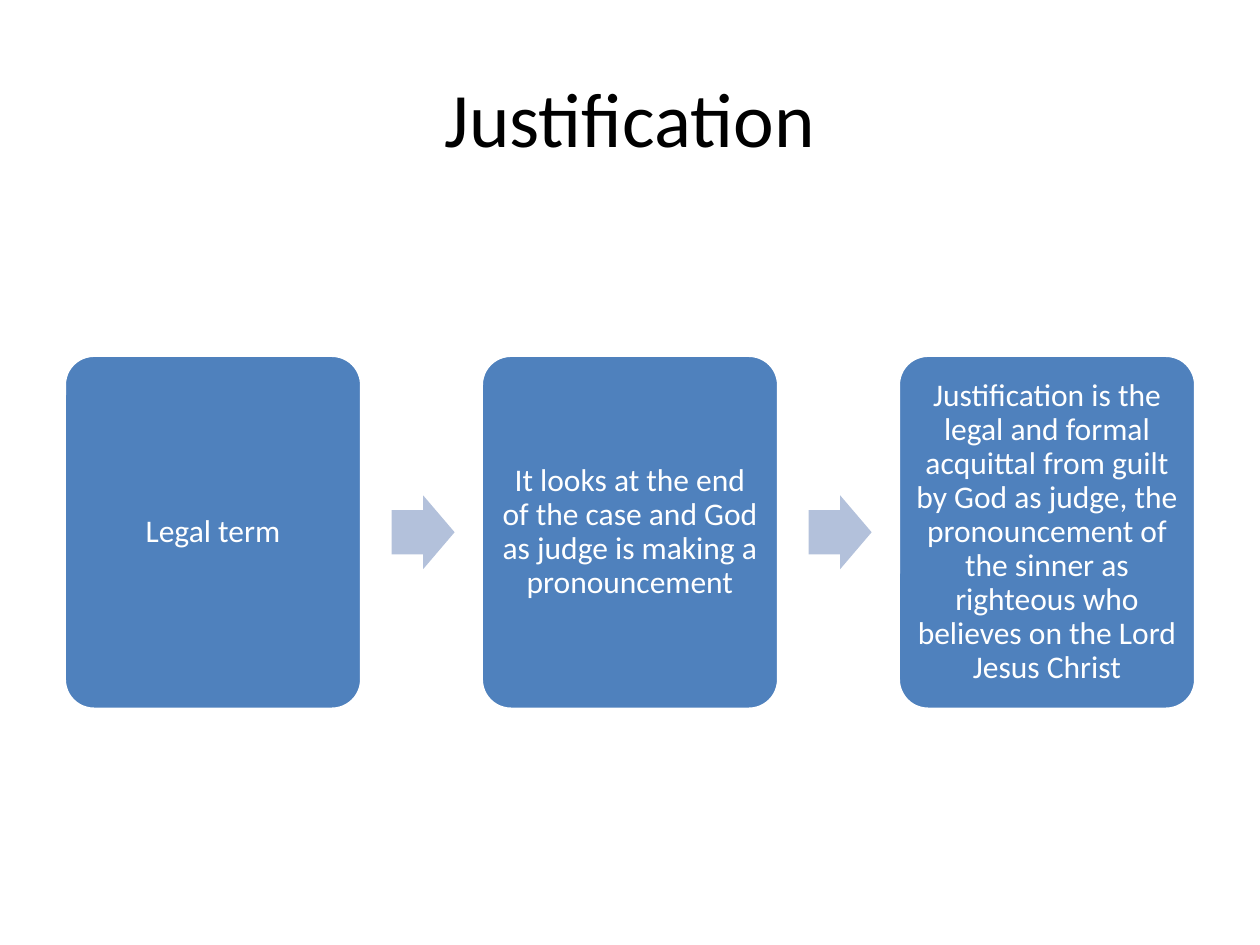
from pptx import Presentation
from pptx.dml.color import RGBColor
from pptx.enum import shapes, text
from pptx.util import Pt

STEPS = [
    "Legal term",
    "It looks at the end of the case and God as judge is making a pronouncement",
    "Justification is the legal and formal acquittal from guilt by God as judge, "
    "the pronouncement of the sinner as righteous who believes on the Lord Jesus Christ",
]


def rgb(value):
    return RGBColor.from_string(value)


def write(sp, content, size, color, inset_x, inset_y):
    tf = sp.text_frame
    tf.word_wrap = True
    tf.vertical_anchor = text.MSO_ANCHOR.MIDDLE
    tf.margin_left = tf.margin_right = Pt(inset_x)
    tf.margin_top = tf.margin_bottom = Pt(inset_y)
    p = tf.paragraphs[0]
    p.text = content
    p.alignment = text.PP_ALIGN.CENTER
    p.font.name = "Calibri"
    p.font.size = Pt(size)
    p.font.color.rgb = rgb(color)
    return p


def add_title(slide, left, top, width, height):
    sp = slide.shapes.add_textbox(Pt(left), Pt(top), Pt(width), Pt(height))
    write(sp, "Justification", 44, "000000", 7.2, 3.6)


def add_block(slide, kind, left, top, width, height, fill):
    sp = slide.shapes.add_shape(kind, Pt(left), Pt(top), Pt(width), Pt(height))
    sp.shadow.inherit = False
    sp.fill.solid()
    sp.fill.fore_color.rgb = rgb(fill)
    sp.line.fill.background()
    return sp


def add_process(slide, left, top, width, height, steps):
    card_w = 170
    pitch = (width - card_w) / (len(steps) - 1)
    arrow_w, arrow_h, arrow_gap = 36, 42.2, 17.1
    for i, step in enumerate(steps):
        x = left + i * pitch
        card = add_block(slide, shapes.MSO_SHAPE.ROUNDED_RECTANGLE,
                         x, top, card_w, height, "4F81BD")
        card.adjustments[0] = 0.1
        card.line.color.rgb = rgb("FFFFFF")
        card.line.width = Pt(2)
        p = write(card, step, 18, "FFFFFF", 5, 5)
        p.line_spacing = 0.9
        if i < len(steps) - 1:
            arrow = add_block(slide, shapes.MSO_SHAPE.RIGHT_ARROW,
                              x + card_w + arrow_gap, top + (height - arrow_h) / 2,
                              arrow_w, arrow_h, "B3C1DB")
            arrow.adjustments[0] = 0.6
            arrow.adjustments[1] = 0.5


def main():
    prs = Presentation()
    prs.slide_width, prs.slide_height = Pt(720), Pt(540)
    slide = prs.slides.add_slide(prs.slide_layouts[6])
    add_title(slide, 36, 21.6, 648, 90)
    add_process(slide, 36.7, 203, 646.6, 202.3, STEPS)
    prs.save("out.pptx")


if __name__ == "__main__":
    main()
